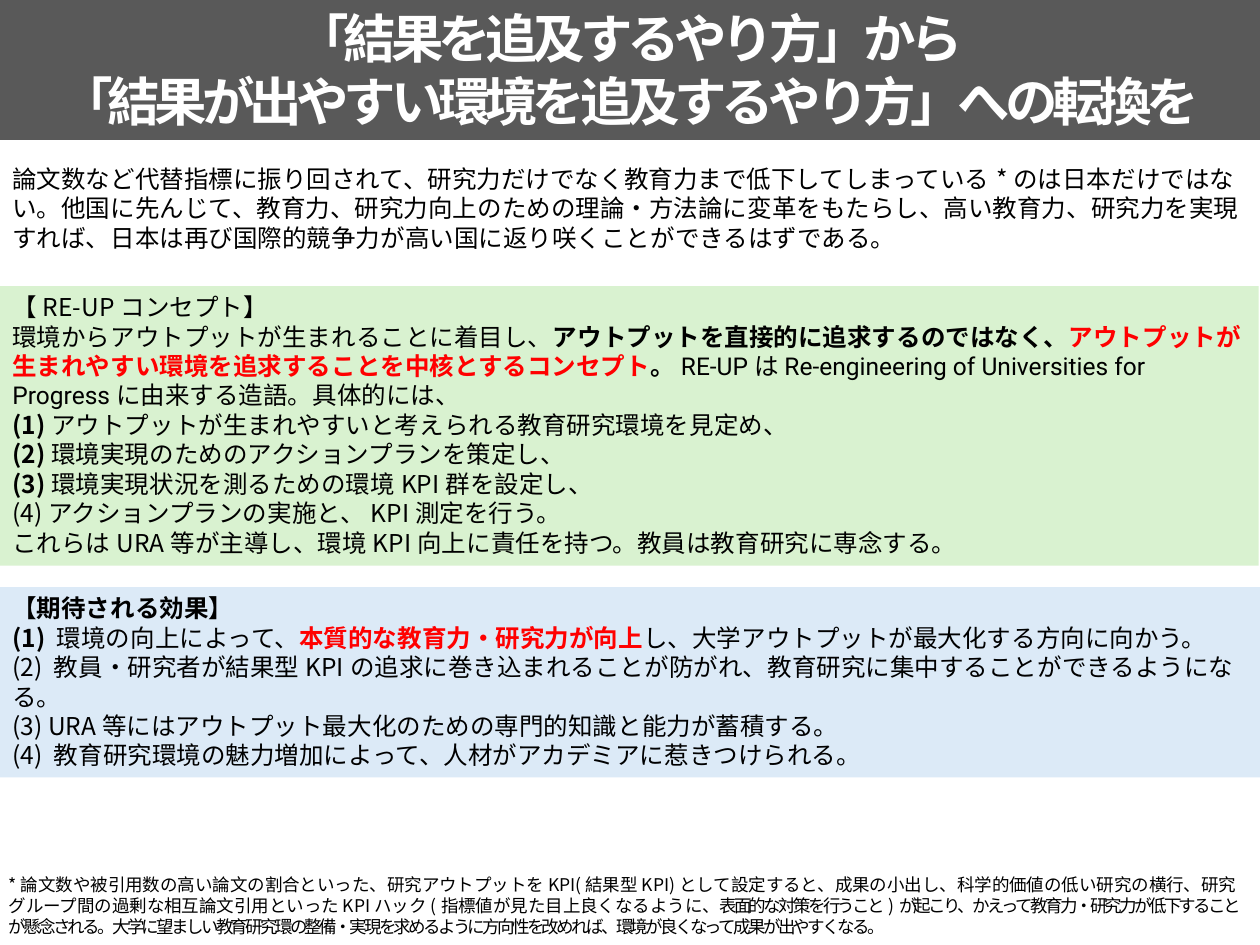
import pptx
import pptx.dml.color
import pptx.enum.shapes
import pptx.enum.text
import pptx.oxml.ns
import pptx.util
from lxml import etree
from pptx.util import Inches

JAPANESE_FONT = "Noto Sans CJK JP"
LATIN_FONT = "Roboto"
RED = "FF0000"
BLACK = "000000"
WHITE = "FFFFFF"
BOLD = {"bold": True}
KEY = {"bold": True, "color": RED}


def color_of(hex_string):
    return pptx.dml.color.RGBColor.from_string(hex_string)


def format_span(span, size, color=BLACK, bold=False, font=JAPANESE_FONT, spacing=0):
    span.font.size = pptx.util.Pt(size)
    span.font.bold = bold
    span.font.name = font
    span.font.color.rgb = color_of(color)
    properties = span.font._element
    # East Asian glyphs need their own typeface entry
    east_asian = etree.SubElement(properties, pptx.oxml.ns.qn("a:ea"))
    east_asian.set("typeface", JAPANESE_FONT)
    if spacing:
        properties.set("spc", str(int(spacing * 100)))


def fill_text(box, paragraphs, size, align=pptx.enum.text.PP_ALIGN.LEFT):
    """Each paragraph is a list of (text, style) spans."""
    frame = box.text_frame
    frame.word_wrap = True
    frame.auto_size = pptx.enum.text.MSO_AUTO_SIZE.SHAPE_TO_FIT_TEXT
    frame.vertical_anchor = pptx.enum.text.MSO_ANCHOR.TOP
    for index, spans in enumerate(paragraphs):
        para = frame.add_paragraph() if index else frame.paragraphs[0]
        para.alignment = align
        para.line_spacing = pptx.util.Pt(size * 1.2)
        for text, style in spans:
            span = para.add_run()
            span.text = text
            format_span(span, size, **style)


def add_band(page, top, height, fill, paragraphs, size=14, width=10, **options):
    box = page.shapes.add_shape(
        pptx.enum.shapes.MSO_SHAPE.RECTANGLE,
        Inches(0), Inches(top), Inches(width), Inches(height))
    box.shadow.inherit = False
    box.fill.solid()
    box.fill.fore_color.rgb = color_of(fill)
    box.line.fill.background()
    fill_text(box, paragraphs, size, **options)


def add_footnote(page, paragraphs):
    box = page.shapes.add_textbox(
        Inches(-0.03), Inches(6.89), Inches(9.99), Inches(0.61))
    fill_text(box, paragraphs, 10)


def main():
    deck = pptx.Presentation()
    deck.slide_width = Inches(10)
    deck.slide_height = Inches(7.5)
    page = deck.slides.add_slide(deck.slide_layouts[6])

    # Expected effects
    add_band(page, 4.66, 1.51, "DCEAF7", [
        [("【期待される効果】", BOLD)],
        [("(1) ", BOLD), ("環境の向上によって、", {}),
         ("本質的な教育力・研究力が向上", KEY),
         ("し、大学アウトプットが最大化する方向に向かう。", {})],
        [("(2) 教員・研究者が結果型KPIの追求に巻き込まれることが防がれ、"
          "教育研究に集中することができるようになる。", {})],
        [("(3) URA等にはアウトプット最大化のための専門的知識と能力が蓄積する。", {})],
        [("(4) 教育研究環境の魅力増加によって、人材がアカデミアに惹きつけられる。", {})],
    ])

    # Title
    title_style = {"color": WHITE, "bold": True, "spacing": -3}
    add_band(page, 0, 1.11, "595959", [
        [("「結果を追及するやり方」から", title_style)],
        [("「結果が出やすい環境を追及するやり方」への転換を", title_style)],
    ], size=30, align=pptx.enum.text.PP_ALIGN.CENTER)

    # Concept
    add_band(page, 2.27, 2.22, "D9F2D0", [
        [("【RE-UPコンセプト】", {})],
        [("環境からアウトプットが生まれることに着目し、", {}),
         ("アウトプットを直接的に追求するのではなく、", BOLD),
         ("アウトプットが生まれやすい環境を追求することを中核とするコンセプト", KEY),
         ("。", BOLD),
         ("RE-UPはRe-engineering of Universities for Progressに由来する造語。",
          {"font": LATIN_FONT}),
         ("具体的には、", {})],
        [("(1)", BOLD), ("アウトプットが生まれやすいと考えられる教育研究環境を見定め、", {})],
        [("(2)", BOLD), ("環境実現のためのアクションプランを策定し、", {})],
        [("(3)", BOLD), ("環境実現状況を測るための環境KPI群を設定し、", {})],
        [("(4)アクションプランの実施と、KPI測定を行う。", {})],
        [("これらはURA等が主導し、環境KPI向上に責任を持つ。教員は教育研究に専念する。", {})],
    ], width=9.99)

    # Introduction
    add_band(page, 1.25, 0.81, WHITE, [
        [("論文数など代替指標に振り回されて、研究力だけでなく教育力まで低下してしまっている*のは"
          "日本だけではない。他国に先んじて、教育力、研究力向上のための理論・方法論に変革をもたらし、"
          "高い教育力、研究力を実現すれば、日本は再び国際的競争力が高い国に返り咲くことができる"
          "はずである。", {})],
    ])

    # Footnote
    add_footnote(page, [
        [("*論文数や被引用数の高い論文の割合といった、研究アウトプットをKPI(結果型KPI)として"
          "設定すると、成果の小出し、科学的価値の低い研究の横行、研究グループ間の過剰な相互論文引用"
          "といったKPIハック(指標値が見た目上良くなるように、", {}),
         ("表面的な対策を行うこと)が起こり、かえって教育力・研究力が低下することが懸念される。"
          "大学に望ましい教育研究環の整備・実現を求めるように方向性を改めれば、"
          "環境が良くなって成果が出やすくなる。", {"spacing": -1.5})],
    ])

    deck.save("out.pptx")


if __name__ == "__main__":
    main()
